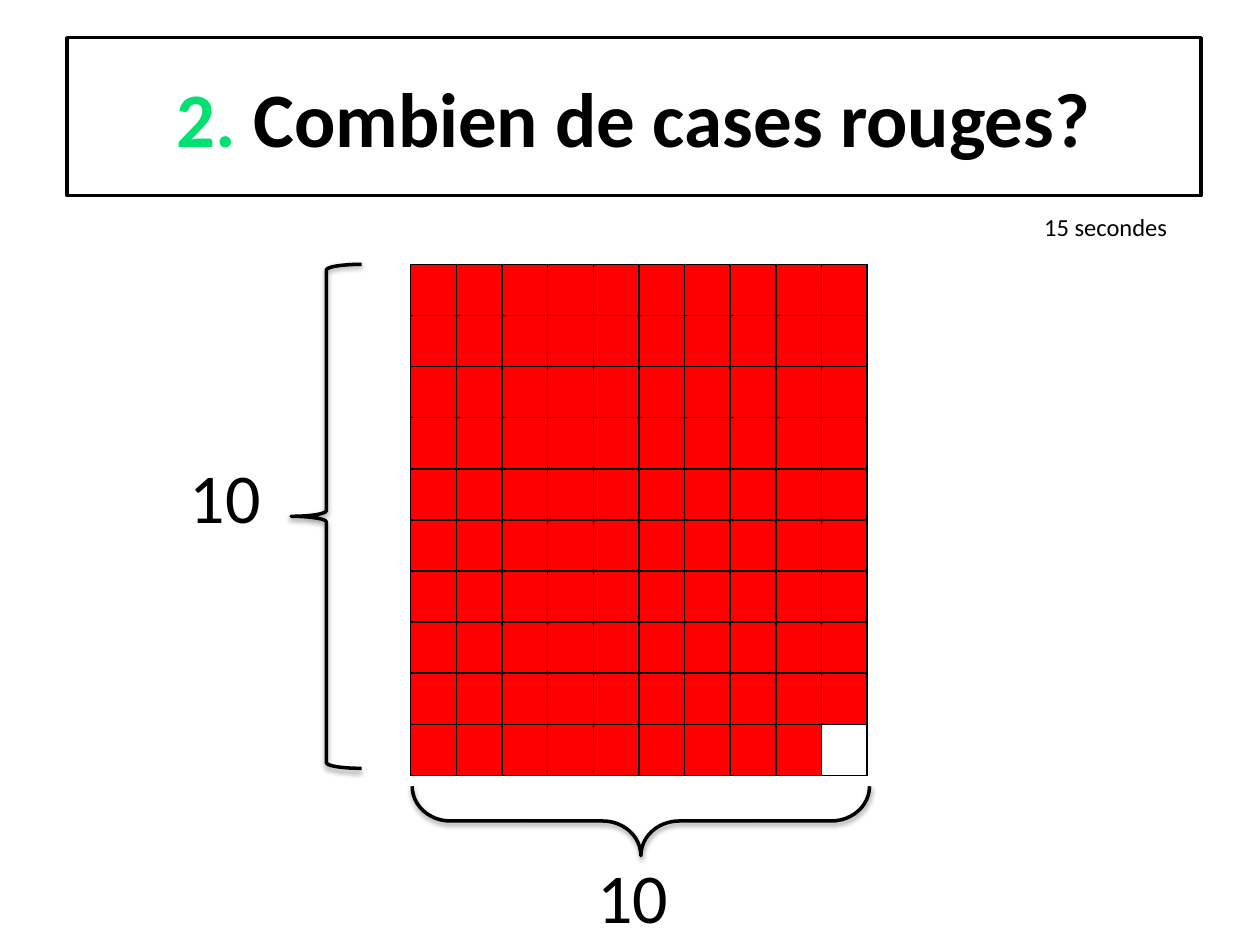
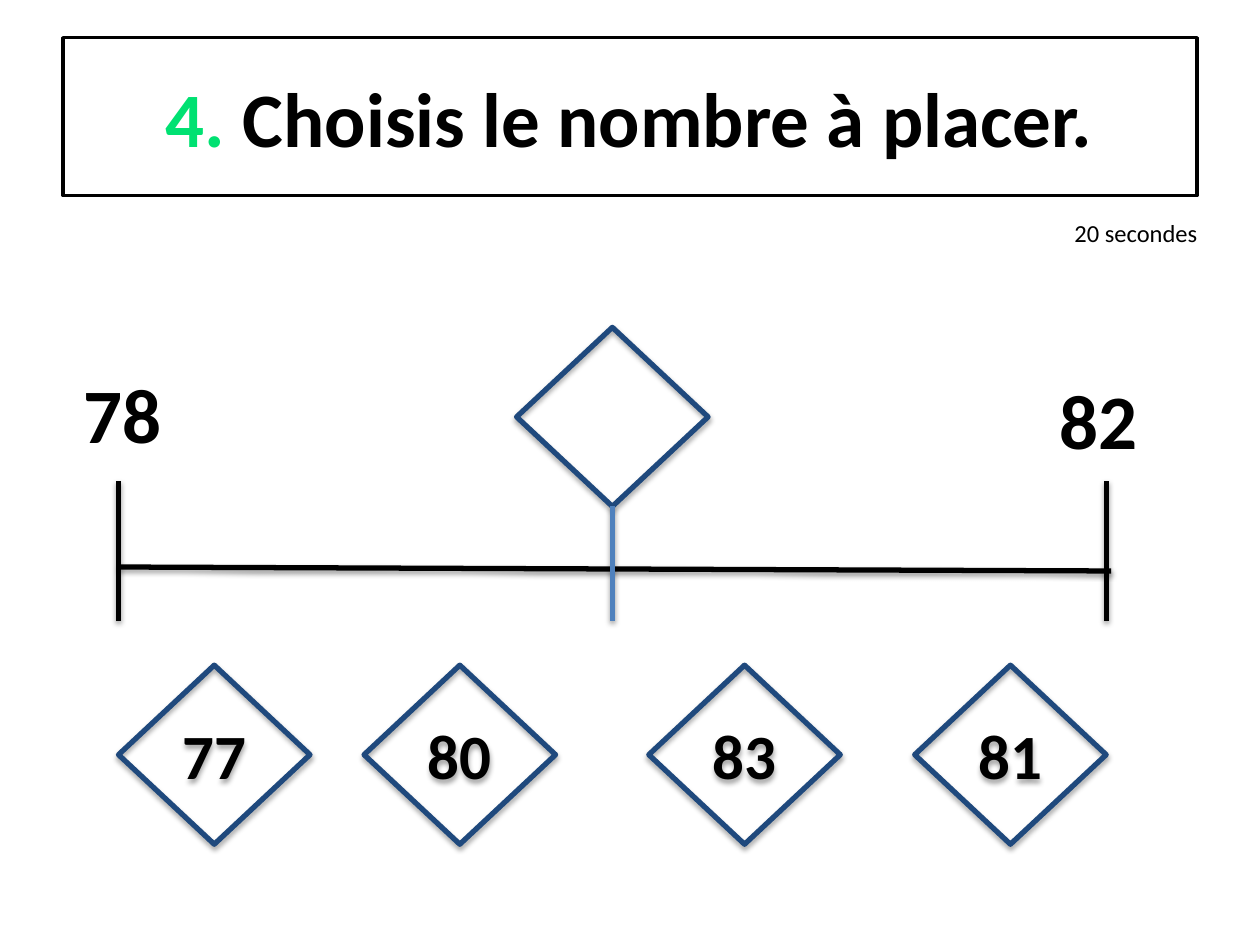
"""Build two mental-arithmetic slides: a grid of cases and a number line."""
import pptx
import pptx.dml.color
import pptx.enum.shapes
import pptx.enum.text
import pptx.oxml
import pptx.oxml.ns
import pptx.util

Cm = pptx.util.Cm
Pt = pptx.util.Pt
RGB = pptx.dml.color.RGBColor
SHAPE = pptx.enum.shapes.MSO_SHAPE
ALIGN = pptx.enum.text.PP_ALIGN
ANCHOR = pptx.enum.text.MSO_ANCHOR

BLACK = RGB(0x00, 0x00, 0x00)
WHITE = RGB(0xFF, 0xFF, 0xFF)
GREEN = RGB(0x00, 0xE1, 0x72)
RED = RGB(0xFF, 0x00, 0x00)
NAVY = RGB(0x1F, 0x49, 0x7D)
BLUE = RGB(0x4F, 0x81, 0xBD)
FONT = "Calibri"

GRID_SIZE = 10
GRID_LEFT, GRID_TOP = 8.28, 5.33
CELL_W, CELL_H = 0.92, 1.03
DIAMOND_W, DIAMOND_H = 3.86, 3.61
LINE_START, LINE_END = 2.39, 22.3
TICK_TOP, TICK_BOTTOM = 9.7, 12.52


def add_run(p, text, size=14, color=BLACK, bold=False):
    r = p.add_run()
    r.text = text
    r.font.name = FONT
    r.font.size = Pt(size)
    r.font.color.rgb = color
    r.font.bold = bold


def add_title(s, number, question, left):
    sp = s.shapes.title
    sp.left, sp.top, sp.width, sp.height = Cm(left), Cm(0.76), Cm(22.86), Cm(3.18)
    sp.fill.solid()
    sp.fill.fore_color.rgb = WHITE
    set_line(sp, BLACK, 2)
    tf = sp.text_frame
    tf.vertical_anchor = ANCHOR.MIDDLE
    p = tf.paragraphs[0]
    p.alignment = ALIGN.CENTER
    add_run(p, number, size=44, color=GREEN, bold=True)
    add_run(p, " " + question, size=44, bold=True)


def add_label(s, text, left, top, width, height, align=ALIGN.LEFT, wrap=False, **style):
    sp = s.shapes.add_textbox(Cm(left), Cm(top), Cm(width), Cm(height))
    sp.text_frame.word_wrap = wrap
    p = sp.text_frame.paragraphs[0]
    p.alignment = align
    add_run(p, text, **style)


def set_line(sp, color, width):
    sp.line.color.rgb = color
    sp.line.width = Pt(width)


def add_shadow(sp, distance=1.6, opacity=38):
    sp._element.spPr.append(pptx.oxml.parse_xml(
        f'<a:effectLst {pptx.oxml.ns.nsdecls("a")}>'
        f'<a:outerShdw blurRad="{Pt(3.1)}" dist="{Pt(distance)}" dir="5400000" rotWithShape="0">'
        f'<a:srgbClr val="{BLACK}"><a:alpha val="{opacity * 1000}"/></a:srgbClr>'
        '</a:outerShdw></a:effectLst>'))


def add_outline(s, kind, left, top, width, height, color, weight, **shadow):
    sp = s.shapes.add_shape(kind, Cm(left), Cm(top), Cm(width), Cm(height))
    sp.fill.background()
    set_line(sp, color, weight)
    add_shadow(sp, **shadow)
    return sp


def add_brace(s, left, top, width, height, rotation=0, curl=0.08):
    sp = add_outline(s, SHAPE.LEFT_BRACE, left, top, width, height, BLACK, 2)
    sp.rotation = rotation
    sp.adjustments[0] = curl


def add_diamond(s, left, top, text=""):
    sp = add_outline(s, SHAPE.DIAMOND, left, top, DIAMOND_W, DIAMOND_H, NAVY, 3,
                     distance=1.8, opacity=35)
    if text:
        tf = sp.text_frame
        tf.vertical_anchor = ANCHOR.MIDDLE
        p = tf.paragraphs[0]
        p.alignment = ALIGN.CENTER
        add_run(p, text, size=36, bold=True)
    return sp


def add_line(s, x1, y1, x2, y2, color=BLACK):
    line = s.shapes.add_connector(pptx.enum.shapes.MSO_CONNECTOR.STRAIGHT,
                                  Cm(x1), Cm(y1), Cm(x2), Cm(y2))
    set_line(line, color, 3)
    add_shadow(line)
    return line


def format_cell(cell, color):
    tcPr = cell._tc.get_or_add_tcPr()
    for side in ("lnL", "lnR", "lnT", "lnB"):
        tcPr.append(pptx.oxml.parse_xml(
            f'<a:{side} {pptx.oxml.ns.nsdecls("a")} w="{Pt(1)}">'
            f'<a:solidFill><a:srgbClr val="{BLACK}"/></a:solidFill></a:{side}>'))
    cell.fill.solid()
    cell.fill.fore_color.rgb = color


def add_grid(s):
    table = s.shapes.add_table(GRID_SIZE, GRID_SIZE, Cm(GRID_LEFT), Cm(GRID_TOP),
                               Cm(GRID_SIZE * CELL_W), Cm(GRID_SIZE * CELL_H)).table
    for column in table.columns:
        column.width = Cm(CELL_W)
    for row in table.rows:
        row.height = Cm(CELL_H)
    for cell in table.iter_cells():
        format_cell(cell, RED)
    table.cell(GRID_SIZE - 1, GRID_SIZE - 1).fill.fore_color.rgb = WHITE


def build_grid_slide(s):
    add_title(s, "2.", "Combien de cases rouges?", 1.35)
    add_grid(s)
    add_brace(s, 5.87, GRID_TOP, 1.42, 10.16)
    add_brace(s, 12.22, 11.94, 1.4, 9.22, rotation=270, curl=0.55)
    for left, top in ((3.58, 9.02), (11.79, 17.09)):
        add_label(s, str(GRID_SIZE), left, top, 1.96, 1.96, size=40)
    add_label(s, "15 secondes", 20.8, 4.14, 3.07, 0.86, wrap=True)


def build_number_line_slide(s):
    add_title(s, "4.", "Choisis le nombre à placer.", 1.27)
    add_label(s, "20 secondes", 21.41, 4.27, 3.02, 0.86)
    add_line(s, LINE_START, 11.43, 22.4, 11.51)
    for x in (LINE_START, LINE_END):
        add_line(s, x, TICK_BOTTOM, x, TICK_TOP)
    for text, left, top in (("78", 1.27, 7.26), ("82", 20.95, 7.39)):
        add_label(s, text, left, top, 2.4, 2.13, align=ALIGN.CENTER, wrap=True,
                  size=44, bold=True)
    for text, left in (("77", 2.39), ("80", 7.34), ("83", 13.08), ("81", 18.44)):
        add_diamond(s, left, 13.41, text)
    middle = (LINE_START + LINE_END) / 2
    target = add_diamond(s, middle - DIAMOND_W / 2, 6.6)
    stem = add_line(s, middle, 6.6 + DIAMOND_H, middle, TICK_BOTTOM, BLUE)
    stem.begin_connect(target, 2)


def main():
    prs = pptx.Presentation()
    prs.slide_width, prs.slide_height = Cm(25.4), Cm(19.05)
    title_only = prs.slide_layouts[5]
    for build in (build_grid_slide, build_number_line_slide):
        build(prs.slides.add_slide(title_only))
    prs.save("out.pptx")


if __name__ == "__main__":
    main()
